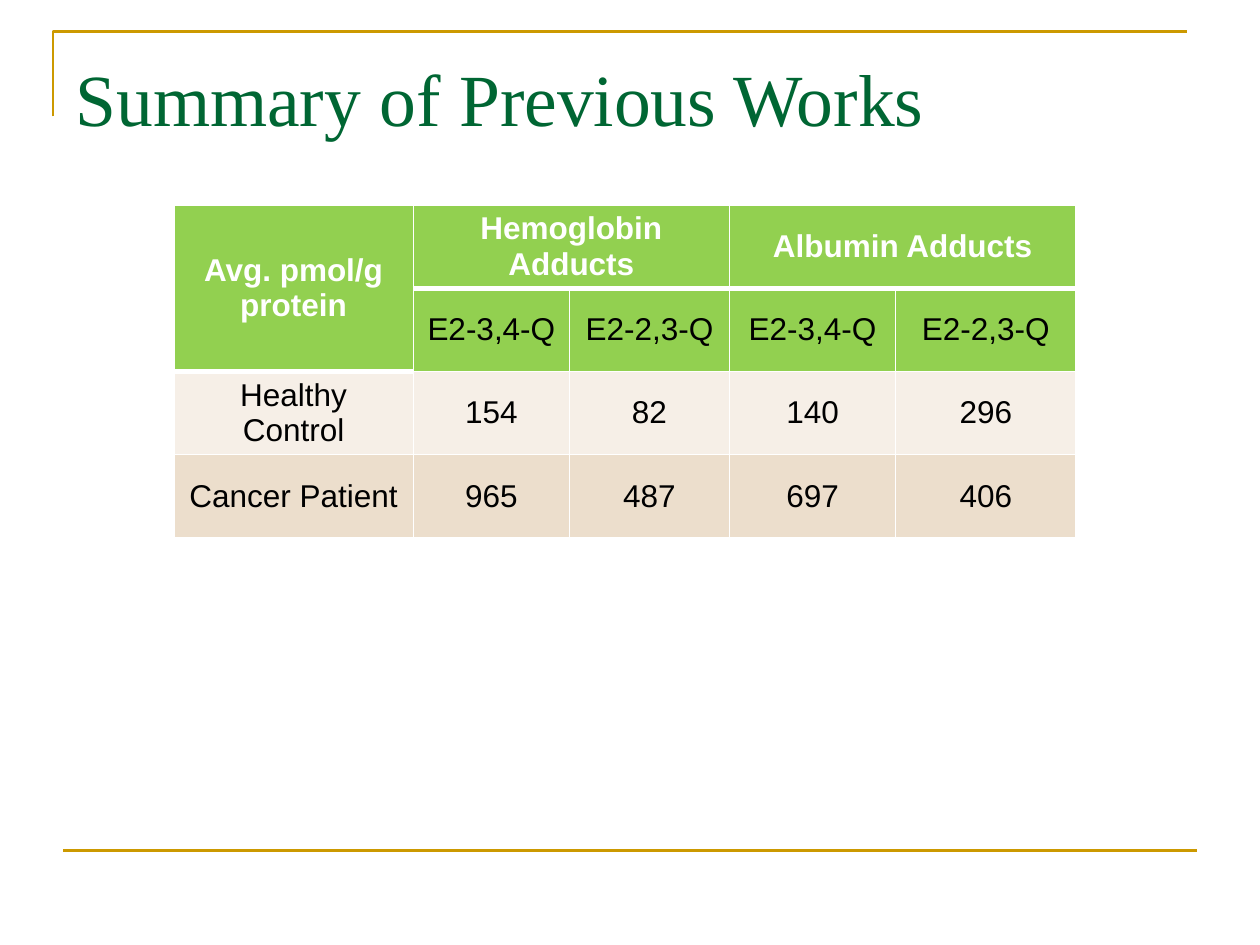
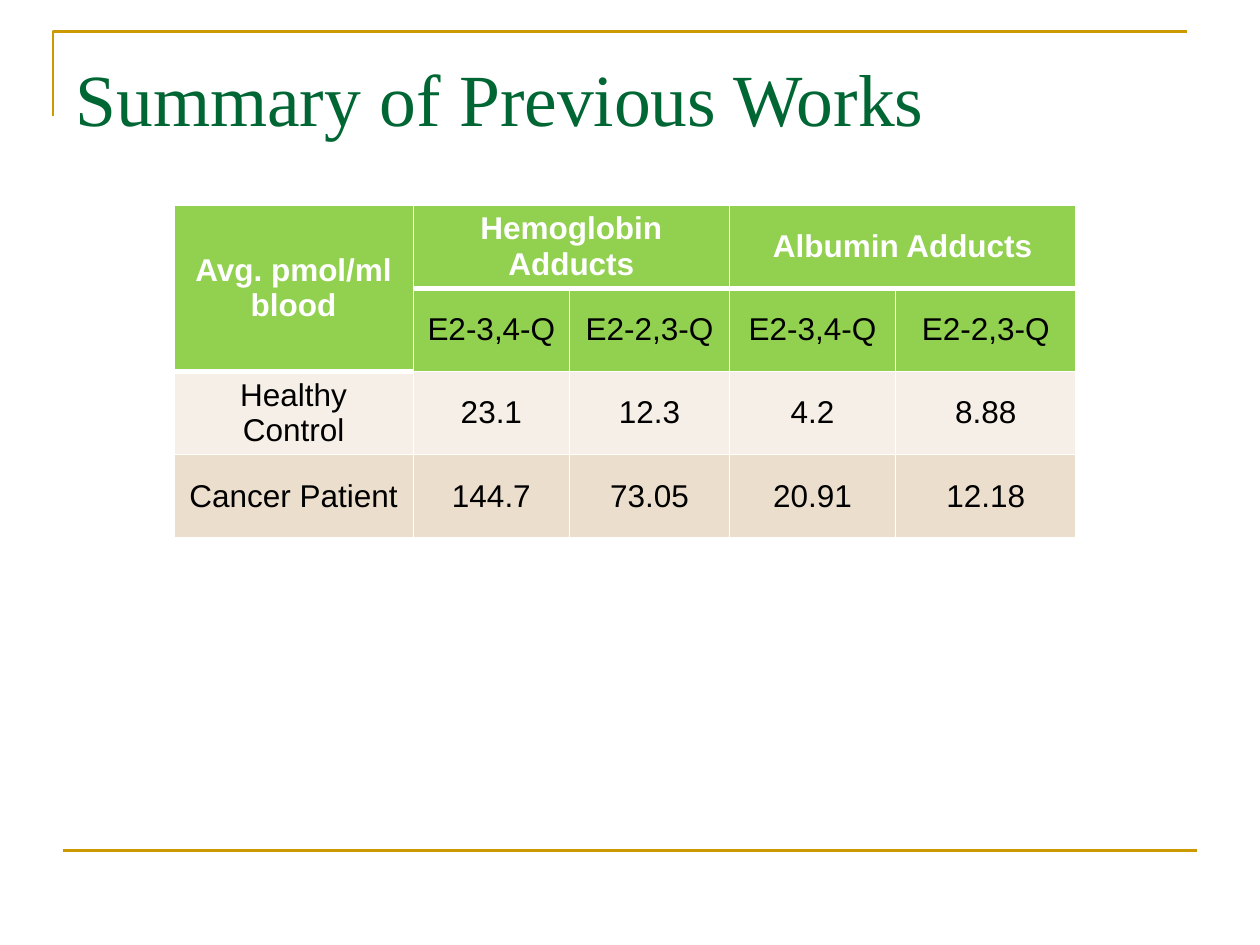
from lxml import etree
from pptx import Presentation
from pptx import util as u
from pptx.dml.color import RGBColor
from pptx.enum import shapes, text
from pptx.oxml.ns import qn

WIDTH, HEIGHT = u.Inches(10), u.Inches(7.5)
GOLD, GREEN, LIME = "CC9900", "006633", "92D050"
PALE, SAND, WHITE, BLACK = "F6EFE7", "ECDECC", "FFFFFF", "000000"
TITLE_FONT, BODY_FONT = "Times New Roman", "Arial"

# Boxes: left, top, width, height as shares of the slide
CORNER_BOX = (0.042, 0.033, 0.9, 0.09)
TITLE_BOX = (0.05, 0.04, 0.9, 0.167)
TABLE_BOX = (0.138, 0.217, 0.716, 0.352)
FOOT_BOX = (0.05, 0.9, 0.9, 0)

COLUMN_WIDTHS = (1.9, 1.24, 1.27, 1.32, 1.43)
ROW_FILLS = (LIME, LIME, PALE, SAND)
GROUPS = ("Hemoglobin Adducts", "", "Albumin Adducts", "")
ADDUCTS = ("E2-3,4-Q", "E2-2,3-Q") * 2
HEADER_MERGES = (((0, 0), (1, 0)), ((0, 1), (0, 2)), ((0, 3), (0, 4)))

# Unit of measure, healthy control values, cancer patient values
SUMMARIES = (
    ("Avg. pmol/g protein", ("154", "82", "140", "296"),
     ("965", "487", "697", "406")),
    ("Avg. pmol/ml blood", ("23.1", "12.3", "4.2", "8.88"),
     ("144.7", "73.05", "20.91", "12.18")),
)


def color(value):
    return RGBColor.from_string(value)


def place(box):
    left, top, width, height = box
    return [round(share * size) for share, size in
            zip((left, top, width, height), (WIDTH, HEIGHT) * 2)]


def style_text(para, font, size, value, bold=False):
    for span in para.runs:
        span.font.name = font
        span.font.size = u.Pt(size)
        span.font.bold = bold
        span.font.color.rgb = color(value)


def style_line(shape):
    shape.line.color.rgb = color(GOLD)
    shape.line.width = u.Pt(1.5)


def add_frame(page):
    # Open corner above the title
    left, top, width, height = place(CORNER_BOX)
    builder = page.shapes.build_freeform(left, top + height)
    builder.add_line_segments([(left, top), (left + width, top)], close=False)
    corner = builder.convert_to_shape()
    corner.fill.background()
    corner.shadow.inherit = False
    style_line(corner)

    # Rule at the foot
    left, top, width, height = place(FOOT_BOX)
    rule = page.shapes.add_connector(
        shapes.MSO_CONNECTOR.STRAIGHT, left, top, left + width, top + height)
    style_line(rule)
    etree.SubElement(rule._element.spPr, qn("a:effectLst"))


def add_title(page, words):
    title = page.shapes.title
    title.left, title.top, title.width, title.height = place(TITLE_BOX)
    frame = title.text_frame
    frame.text = words
    frame.word_wrap = True
    frame.auto_size = text.MSO_AUTO_SIZE.NONE
    frame.vertical_anchor = text.MSO_ANCHOR.TOP
    frame.margin_top = u.Inches(0.12)
    para = frame.paragraphs[0]
    para.alignment = text.PP_ALIGN.LEFT
    style_text(para, TITLE_FONT, 42, GREEN)


def thick_below(row, column):
    return row == 0 or (row, column) == (1, 0)


def set_borders(cell, row, column):
    top = 3 if row and thick_below(row - 1, column) else 1
    bottom = 3 if thick_below(row, column) else 1
    properties = cell._tc.get_or_add_tcPr()
    for side, points in zip("LRTB", (1, 1, top, bottom)):
        edge = etree.SubElement(properties, qn(f"a:ln{side}"), w=str(u.Pt(points)))
        fill = etree.SubElement(edge, qn("a:solidFill"))
        etree.SubElement(fill, qn("a:srgbClr"), val=WHITE)


def add_summary_table(page, unit, healthy, cancer):
    rows = ((unit, *GROUPS), ("", *ADDUCTS),
            ("Healthy Control", *healthy), ("Cancer Patient", *cancer))
    left, top, width, height = place(TABLE_BOX)
    table = page.shapes.add_table(
        len(rows), len(COLUMN_WIDTHS), left, top, width, height).table
    for column, share in zip(table.columns, COLUMN_WIDTHS):
        column.width = round(width * share / sum(COLUMN_WIDTHS))

    # Cells
    for r, (words, fill) in enumerate(zip(rows, ROW_FILLS)):
        for c, word in enumerate(words):
            cell = table.cell(r, c)
            set_borders(cell, r, c)
            cell.fill.solid()
            cell.fill.fore_color.rgb = color(fill)
            cell.vertical_anchor = text.MSO_ANCHOR.MIDDLE
            cell.text = word
            para = cell.text_frame.paragraphs[0]
            para.alignment = text.PP_ALIGN.CENTER
            style_text(para, BODY_FONT, 18, BLACK if r else WHITE, bold=r == 0)

    # Header groups
    for first, last in HEADER_MERGES:
        table.cell(*first).merge(table.cell(*last))


def main():
    deck = Presentation()
    deck.slide_width, deck.slide_height = WIDTH, HEIGHT
    title_only = deck.slide_layouts[5]
    for summary in SUMMARIES:
        page = deck.slides.add_slide(title_only)
        add_frame(page)
        add_title(page, "Summary of Previous Works")
        add_summary_table(page, *summary)
    deck.save("out.pptx")


if __name__ == "__main__":
    main()
